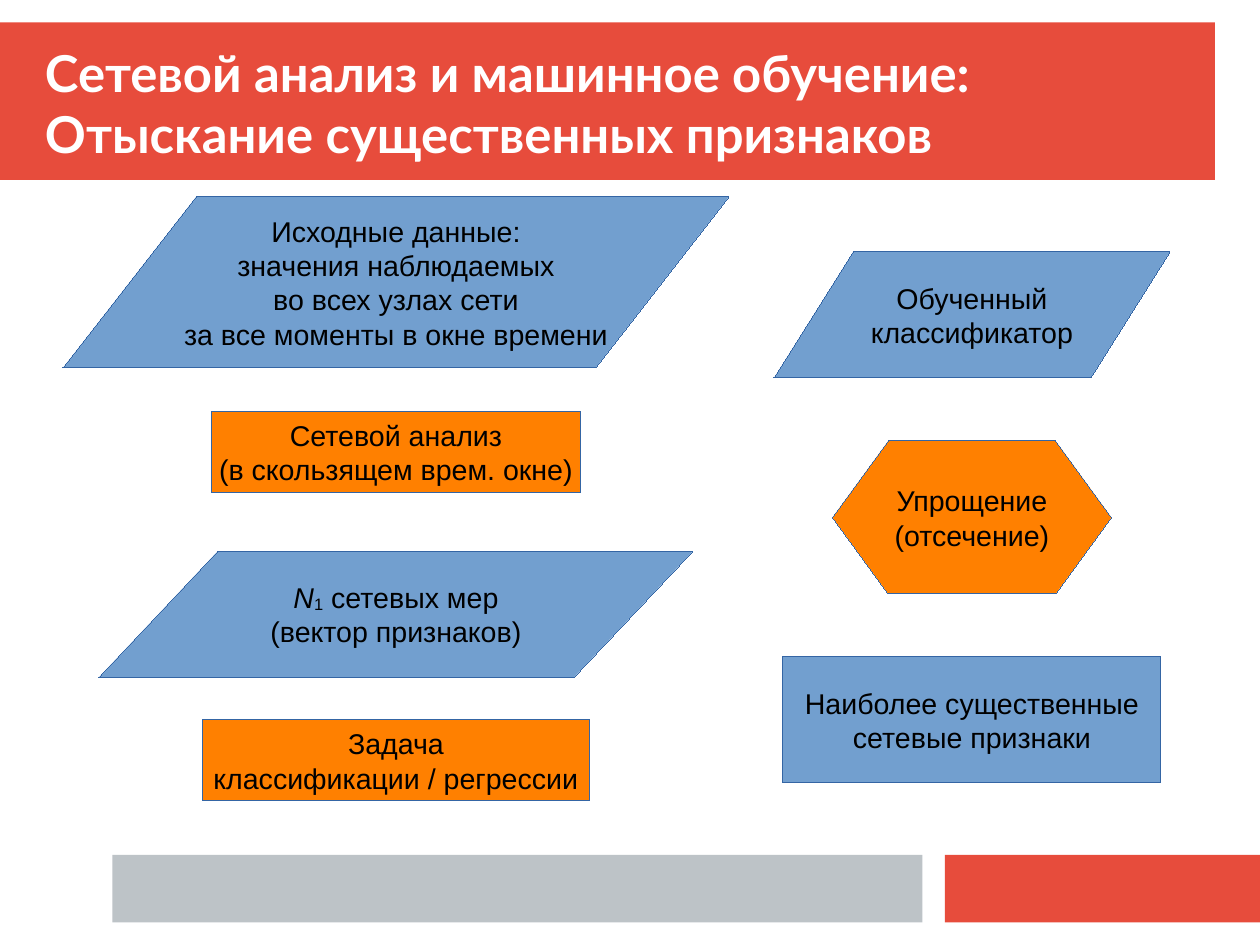
from dataclasses import dataclass

from pptx import Presentation
from pptx.dml.color import RGBColor
from pptx.enum.shapes import MSO_SHAPE
from pptx.enum.text import MSO_ANCHOR, PP_ALIGN
from pptx.util import Emu, Pt

PX = 9000  # a quarter of a millimetre

RED = RGBColor(0xE7, 0x4C, 0x3C)
GREY = RGBColor(0xBD, 0xC3, 0xC7)
BLUE = RGBColor(0x72, 0x9F, 0xCF)
ORANGE = RGBColor(0xFF, 0x80, 0x00)
OUTLINE = RGBColor(0x34, 0x65, 0xA4)
BLACK = RGBColor(0, 0, 0)
WHITE = RGBColor(0xFF, 0xFF, 0xFF)

DATA = MSO_SHAPE.FLOWCHART_DATA
PROCESS = MSO_SHAPE.FLOWCHART_PROCESS
PREPARATION = MSO_SHAPE.FLOWCHART_PREPARATION


@dataclass(frozen=True)
class Box:
    x: int
    y: int
    w: int
    h: int

    def emu(self) -> list[Emu]:
        return [Emu(v * PX) for v in (self.x, self.y, self.w, self.h)]


@dataclass(frozen=True)
class Piece:
    text: str
    italic: bool = False
    baseline: int = 0  # thousandths of a percent


@dataclass(frozen=True)
class Step:
    kind: MSO_SHAPE
    color: RGBColor
    box: Box
    pieces: tuple[Piece, ...]


BANDS = [
    (Box(0, 20, 1080, 140), RED),
    (Box(840, 760, 280, 60), RED),
    (Box(100, 760, 720, 60), GREY),
]

TITLE = "Сетевой анализ и машинное обучение:\nОтыскание существенных признаков"

SOURCE_STEPS = [
    Step(DATA, BLUE, Box(56, 175, 592, 152), (Piece(
        "Исходные данные:\nзначения наблюдаемых\n"
        "во всех узлах сети\nза все моменты в окне времени"),)),
    Step(PROCESS, ORANGE, Box(188, 366, 328, 72),
         (Piece("Сетевой анализ\n(в скользящем врем. окне)"),)),
    Step(DATA, BLUE, Box(88, 490, 528, 112),
         (Piece("N", italic=True), Piece("1", baseline=-8000),
          Piece(" сетевых мер\n(вектор признаков)"))),
    Step(PROCESS, ORANGE, Box(180, 640, 344, 72),
         (Piece("Задача\nклассификации / регрессии"),)),
]

RESULT_STEPS = [
    Step(DATA, BLUE, Box(688, 224, 352, 112),
         (Piece("Обученный\nклассификатор"),)),
    Step(PREPARATION, ORANGE, Box(740, 392, 248, 136),
         (Piece("Упрощение\n(отсечение)"),)),
    Step(PROCESS, BLUE, Box(696, 584, 336, 112),
         (Piece("Наиболее существенные\nсетевые признаки"),)),
]


def add_filled(slide, kind: MSO_SHAPE, box: Box, color: RGBColor):
    sp = slide.shapes.add_shape(kind, *box.emu())
    sp.shadow.inherit = False
    sp.fill.solid()
    sp.fill.fore_color.rgb = color
    sp.line.fill.background()
    return sp


def write_pieces(p, pieces: tuple[Piece, ...], font: str, size: int,
                 color: RGBColor, bold: bool = False) -> None:
    """Add the pieces as runs, turning each newline into a line break."""
    for piece in pieces:
        for i, line in enumerate(piece.text.split("\n")):
            if i:
                p.add_line_break()
            r = p.add_run()
            r.text = line
            r.font.name = font
            r.font.size = Pt(size)
            r.font.color.rgb = color
            r.font.bold = bold
            r.font.italic = piece.italic
            if piece.baseline:
                r.font._element.set("baseline", str(piece.baseline))


def add_title(slide) -> None:
    tf = slide.shapes.add_textbox(*Box(40, 34, 1040, 114).emu()).text_frame
    tf.word_wrap = True
    tf.vertical_anchor = MSO_ANCHOR.MIDDLE
    tf.margin_left = tf.margin_right = tf.margin_top = tf.margin_bottom = 0
    write_pieces(tf.paragraphs[0], (Piece(TITLE),), "Lato", 32, WHITE, bold=True)


def add_step(slide, step: Step) -> None:
    """Draw a flowchart step with a hairline outline and centred text."""
    sp = add_filled(slide, step.kind, step.box, step.color)
    sp.line.color.rgb = OUTLINE
    sp._element.spPr.get_or_add_ln().set("w", "0")
    tf = sp.text_frame
    tf.word_wrap = False
    tf.vertical_anchor = MSO_ANCHOR.MIDDLE
    p = tf.paragraphs[0]
    p.alignment = PP_ALIGN.CENTER
    write_pieces(p, step.pieces, "Arial", 18, BLACK)


def main() -> None:
    prs = Presentation()
    prs.slide_width, prs.slide_height = Emu(1120 * PX), Emu(840 * PX)
    slide = prs.slides.add_slide(prs.slide_layouts[6])
    for box, color in BANDS:
        add_filled(slide, MSO_SHAPE.RECTANGLE, box, color)
    for step in SOURCE_STEPS:
        add_step(slide, step)
    add_title(slide)
    for step in RESULT_STEPS:
        add_step(slide, step)
    prs.save("out.pptx")


if __name__ == "__main__":
    main()
